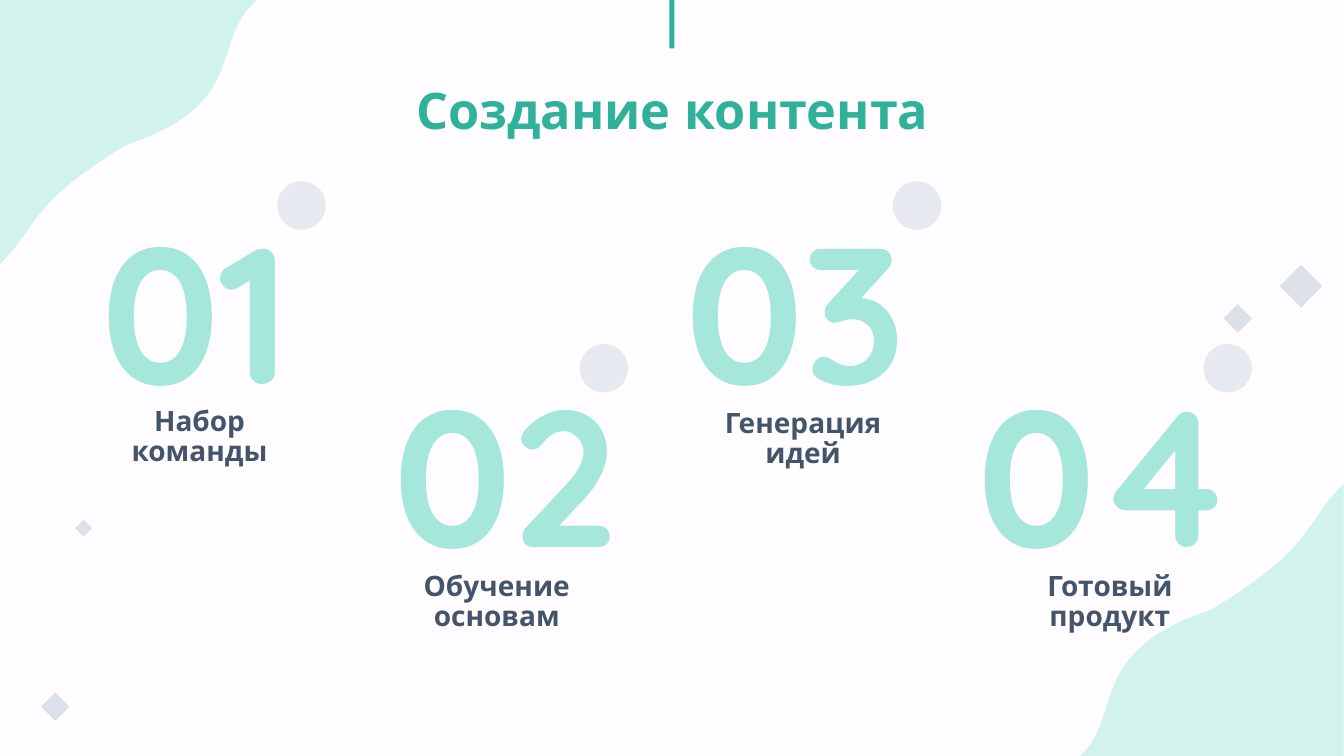
"""Build the "Создание контента" slide with four numbered steps."""
from lxml.etree import SubElement
from pptx import Presentation
from pptx.dml.color import RGBColor
from pptx.enum.shapes import MSO_SHAPE
from pptx.enum.text import MSO_ANCHOR, PP_ALIGN
from pptx.oxml.ns import qn
from pptx.util import Cm, Pt

BACKGROUND = RGBColor(0xFF, 0xFD, 0xFF)
GREEN = RGBColor(0x30, 0xB2, 0x9A)
MINT = RGBColor(0xA6, 0xE7, 0xDB)
PALE_MINT = RGBColor(0xD2, 0xF3, 0xED)
SLATE = RGBColor(0x44, 0x54, 0x6A)
BLUE_GREY = RGBColor(0x84, 0x97, 0xB0)
LIGHT_GREY = RGBColor(0xD6, 0xDC, 0xE5)
CURVE_STEPS = 24

deck = Presentation()
deck.slide_width, deck.slide_height = Cm(33.87), Cm(19.05)
page = deck.slides.add_slide(deck.slide_layouts[6])
page.background.fill.solid()
page.background.fill.fore_color.rgb = BACKGROUND


def paint(shape, color, opacity=100):
    shape.shadow.inherit = False
    shape.line.fill.background()
    shape.fill.solid()
    shape.fill.fore_color.rgb = color
    if opacity < 100:
        tint = shape.fill._xPr.find(qn("a:solidFill"))[0]
        SubElement(tint, qn("a:alpha")).set("val", str(opacity * 1000))


def add_text(text, left, top, width, height, size, color, wrap=True, spacing=None):
    box = page.shapes.add_textbox(Cm(left), Cm(top), Cm(width), Cm(height))
    box.text_frame.word_wrap = wrap
    paragraph = box.text_frame.paragraphs[0]
    paragraph.alignment = PP_ALIGN.CENTER
    paragraph.line_spacing = spacing
    span = paragraph.add_run()
    span.text = text
    span.font.color.rgb = color
    font_format = {"name": "Quicksand", "size": Pt(size), "bold": True}
    for name, value in font_format.items():
        setattr(span.font, name, value)
    return box


arcs = [
    (27.25, -5.44, 225, (121.757, 191.51), 0.14),
    (-9.53, 12.24, 42.5, (156.232, 179.914), 0.077),
]
for left, top, rotation, angles, thickness in arcs:
    arc = page.shapes.add_shape(MSO_SHAPE.BLOCK_ARC, Cm(left), Cm(top), Cm(11.61), Cm(11.61))
    arc.rotation = rotation
    for index, angle in enumerate(angles):
        arc.adjustments[index] = angle * 0.6
    arc.adjustments[2] = thickness
    paint(arc, BLUE_GREY, 29)

diamonds = [(32.41, 6.83, 0.76), (30.94, 7.77, 0.51), (1.14, 17.55, 0.51), (1.96, 13.16, 0.3)]
for left, top, side in diamonds:
    diamond = page.shapes.add_shape(MSO_SHAPE.RECTANGLE, Cm(left), Cm(top), Cm(side), Cm(side))
    diamond.rotation = 315
    paint(diamond, BLUE_GREY, 28)

blobs = [
    ((33.86, 19.13), (27.13, 19.13), [
        ((28.37, 18.11), (27.28, 16.43), (30.51, 15.37)),
        ((33.15, 13.79), (32.87, 13.16), (33.86, 12.19)),
    ]),
    ((-0.03, 0), (6.48, 0), [
        ((5.28, 0.99), (6.32, 2.62), (3.23, 3.63)),
        ((0.69, 5.13), (0.94, 5.77), (-0.03, 6.68)),
    ]),
]
for corner, edge, curves in blobs:
    outline = [edge]
    for first, second, end in curves:
        start = outline[-1]
        for step in range(1, CURVE_STEPS + 1):
            t = step / CURVE_STEPS
            weights = ((1 - t) ** 3, 3 * t * (1 - t) ** 2, 3 * t**2 * (1 - t), t**3)
            outline.append(tuple(
                sum(weight * value for weight, value in zip(weights, values))
                for values in zip(start, first, second, end)
            ))
    builder = page.shapes.build_freeform(Cm(corner[0]), Cm(corner[1]))
    builder.add_line_segments([(Cm(x), Cm(y)) for x, y in outline], close=True)
    paint(builder.convert_to_shape(), PALE_MINT)

title = add_text("Создание контента", 2.34, 1.02, 29.21, 3.68, 36, GREEN, spacing=0.9)
title.text_frame.vertical_anchor = MSO_ANCHOR.MIDDLE

bar = page.shapes.add_shape(MSO_SHAPE.RECTANGLE, Cm(16.87), Cm(0), Cm(0.13), Cm(1.22))
paint(bar, GREEN)

steps = [
    ("Набор команды", 6.71, 1.88, 10.13, 6.99),
    ("Обучение основам", 7.57, 9.37, 14.3, 14.61),
    ("Генерация идей", 7.49, 17.09, 10.19, 22.5),
    ("Готовый продукт", 8.41, 24.82, 14.3, 30.33),
]
for index, (label, number_width, label_left, label_top, dot_left) in enumerate(steps):
    drop = 4.1 * (index % 2)
    add_text(f"{index + 1:02} ", 2.26 + 7.36 * index, 4.7 + drop, number_width, 6.15,
             138, MINT, wrap=False)
    add_text(label, label_left, label_top, 6.3, 2.8, 20, SLATE, spacing=0.9)
    dot = page.shapes.add_shape(
        MSO_SHAPE.OVAL, Cm(dot_left), Cm(4.57 + drop), Cm(1.22), Cm(1.22))
    paint(dot, LIGHT_GREY, 60)

deck.save("out.pptx")
